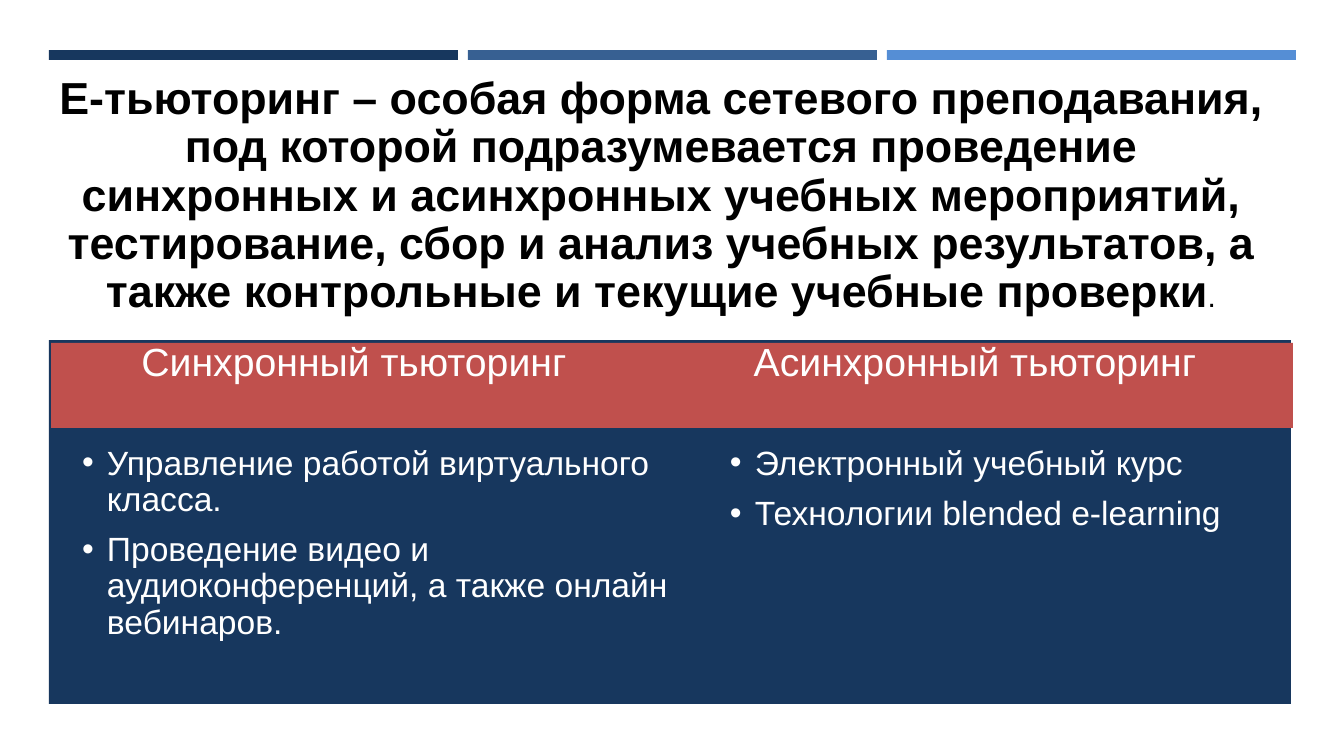
from dataclasses import dataclass

from lxml import etree
from pptx import Presentation
from pptx.dml.color import RGBColor
from pptx.enum.shapes import MSO_SHAPE
from pptx.enum.text import MSO_ANCHOR, MSO_AUTO_SIZE, PP_ALIGN
from pptx.oxml.ns import qn
from pptx.util import Emu, Pt

RECTANGLE = MSO_SHAPE.RECTANGLE
TOP, MIDDLE = MSO_ANCHOR.TOP, MSO_ANCHOR.MIDDLE
LEFT, CENTER = PP_ALIGN.LEFT, PP_ALIGN.CENTER
NO_FIT = MSO_AUTO_SIZE.NONE
EMU_PER_PX = 914400 / 134.4
COMPARISON_LAYOUT = 4


@dataclass(frozen=True)
class Theme:
    font: str = "Arial"
    navy: str = "17375E"
    steel: str = "376092"
    sky: str = "558ED5"
    red: str = "C0504D"
    white: str = "FFFFFF"
    black: str = "000000"
    title_size: int = 24
    stop_size: int = 16
    header_size: int = 21
    list_size: int = 18
    line_spacing: float = 0.9
    paragraph_gap: float = 7.5


THEME = Theme()

DEFINITION = (
    "Е-тьюторинг – особая форма сетевого преподавания, под которой "
    "подразумевается проведение синхронных и асинхронных учебных мероприятий, "
    "тестирование, сбор и анализ учебных результатов, а также контрольные "
    "и текущие учебные проверки"
)

COLUMNS = [
    {
        "header": "Синхронный тьюторинг",
        "header_area": (51, 343, 606, 85),
        "items": [
            "Управление работой виртуального класса.",
            "Проведение видео и аудиоконференций, а также онлайн вебинаров.",
        ],
        "list_area": (82, 446, 609, 228),
    },
    {
        "header": "Асинхронный тьюторинг",
        "header_area": (657, 343, 636, 85),
        "items": ["Электронный учебный курс", "Технологии blended е-learning"],
        "list_area": (730, 446, 532, 228),
    },
]


def px(value):
    return Emu(round(value * EMU_PER_PX))


def place(box, area):
    box.left, box.top, box.width, box.height = map(px, area)


def paint(shape, color):
    shape.fill.solid()
    shape.fill.fore_color.rgb = RGBColor.from_string(color)


def add_backdrop(page, area, color):
    block = page.shapes.add_shape(RECTANGLE, *map(px, area))
    block.shadow.inherit = False
    block.line.fill.background()
    paint(block, color)
    page.shapes.title.element.addprevious(block.element)


def prepare_frame(box, area, anchor=TOP):
    place(box, area)
    frame = box.text_frame
    frame.word_wrap = True
    frame.auto_size = NO_FIT
    frame.vertical_anchor = anchor
    frame.margin_left = frame.margin_top = 0
    frame.margin_right = frame.margin_bottom = 0
    return frame


def add_text(para, text, *, size, color, bold=False, align=LEFT, gap=0):
    para.alignment = align
    para.line_spacing = THEME.line_spacing
    para.space_before = Pt(gap)
    span = para.add_run()
    span.text = text
    span.font.name = THEME.font
    span.font.size = Pt(size)
    span.font.bold = bold
    span.font.color.rgb = RGBColor.from_string(color)


def add_bullet(para):
    properties = para._p.get_or_add_pPr()
    indent = px(25)
    properties.set("marL", str(indent))
    properties.set("indent", str(-indent))
    etree.SubElement(properties, qn("a:buChar")).set("char", "•")


def fill_title(box):
    para = prepare_frame(box, (56, 70, 1210, 253), MIDDLE).paragraphs[0]
    add_text(para, DEFINITION, size=THEME.title_size, color=THEME.black,
             bold=True, align=CENTER)
    add_text(para, ".", size=THEME.stop_size, color=THEME.black, align=CENTER)


def fill_header(box, text, area):
    paint(box, THEME.red)
    para = prepare_frame(box, area).paragraphs[0]
    add_text(para, text, size=THEME.header_size, color=THEME.white, align=CENTER)


def fill_list(box, items, area):
    frame = prepare_frame(box, area)
    for index, item in enumerate(items):
        para = frame.add_paragraph() if index else frame.paragraphs[0]
        add_bullet(para)
        add_text(para, item, size=THEME.list_size, color=THEME.white,
                 gap=THEME.paragraph_gap if index else 0)


def main():
    deck = Presentation()
    deck.slide_width, deck.slide_height = px(1344), px(756)
    page = deck.slides.add_slide(deck.slide_layouts[COMPARISON_LAYOUT])
    for index, color in enumerate((THEME.navy, THEME.steel, THEME.sky)):
        add_backdrop(page, (49 + 419 * index, 50, 409, 10), color)
    add_backdrop(page, (49, 340, 1242, 364), THEME.navy)

    title, *boxes = page.placeholders
    fill_title(title)
    for column, header, body in zip(COLUMNS, boxes[::2], boxes[1::2]):
        fill_header(header, column["header"], column["header_area"])
        fill_list(body, column["items"], column["list_area"])
    for box in boxes[4:]:
        box.element.getparent().remove(box.element)
    deck.save("out.pptx")


if __name__ == "__main__":
    main()
